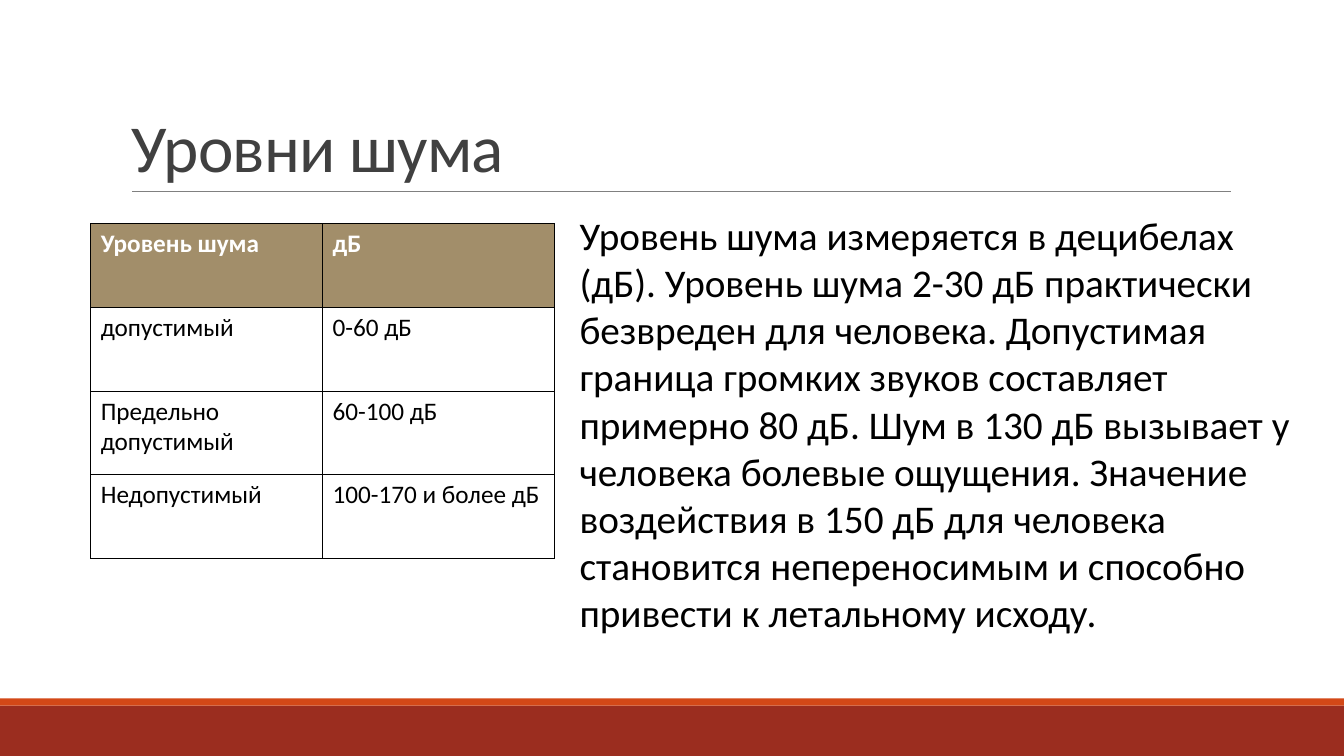
from lxml import etree
from pptx import Presentation
from pptx.dml.color import RGBColor
from pptx.enum.shapes import MSO_CONNECTOR, MSO_SHAPE
from pptx.enum.text import MSO_ANCHOR, MSO_AUTO_SIZE, PP_ALIGN
from pptx.oxml.ns import qn
from pptx.util import Inches, Pt

RECTANGLE = MSO_SHAPE.RECTANGLE
STRAIGHT = MSO_CONNECTOR.STRAIGHT
BOTTOM = MSO_ANCHOR.BOTTOM
LEFT = PP_ALIGN.LEFT
FIT_SHAPE = MSO_AUTO_SIZE.SHAPE_TO_FIT_TEXT
FIXED_SIZE = MSO_AUTO_SIZE.NONE

BRICK = RGBColor(0x9B, 0x2D, 0x1F)
ORANGE = RGBColor(0xD3, 0x48, 0x17)
GRAY = RGBColor(0x80, 0x80, 0x80)
DARK = RGBColor(0x40, 0x40, 0x40)
TAN = RGBColor(0xA2, 0x8E, 0x6A)
BLACK = RGBColor(0, 0, 0)
WHITE = RGBColor(0xFF, 0xFF, 0xFF)

NOISE_LEVELS = [
    ("Уровень шума", "дБ"),
    ("допустимый", "0-60 дБ"),
    ("Предельно допустимый", "60-100 дБ"),
    ("Недопустимый", "100-170 и более дБ"),
]
EXPLANATION = (
    "Уровень шума измеряется в децибелах (дБ). "
    "Уровень шума 2-30 дБ практически безвреден для человека. "
    "Допустимая граница громких звуков составляет примерно 80 дБ. "
    "Шум в 130 дБ вызывает у человека болевые ощущения. "
    "Значение воздействия в 150 дБ для человека становится непереносимым "
    "и способно привести к летальному исходу."
)


class NoiseSlide:
    font = "Calibri"

    def __init__(self, deck):
        self.slide = deck.slides.add_slide(deck.slide_layouts[5])
        self.shapes = self.slide.shapes

    def add_styled_run(self, paragraph, text, size, color, bold=False):
        paragraph.alignment = LEFT
        run = paragraph.add_run()
        run.text = text
        run.font.name = self.font
        run.font.size = Pt(size)
        run.font.bold = bold
        run.font.color.rgb = color
        return run

    def band(self, top, height, color):
        """Draw a full-width coloured strip."""
        strip = self.shapes.add_shape(
            RECTANGLE, 0, Inches(top), Inches(13.33), Inches(height))
        strip.shadow.inherit = False
        strip.fill.solid()
        strip.fill.fore_color.rgb = color
        strip.line.fill.background()

    def rule(self, left, right, y):
        """Draw a thin horizontal line."""
        divider = self.shapes.add_connector(
            STRAIGHT, Inches(left), Inches(y), Inches(right), Inches(y))
        divider.line.color.rgb = GRAY
        divider.line.width = Pt(0.5)
        etree.SubElement(divider._element.spPr, qn("a:effectLst"))

    def title(self, text, left, top, width, height):
        heading = self.shapes.title
        heading.left, heading.top = Inches(left), Inches(top)
        heading.width, heading.height = Inches(width), Inches(height)
        frame = heading.text_frame
        frame.auto_size = FIXED_SIZE
        frame.vertical_anchor = BOTTOM
        frame.paragraphs[0].line_spacing = 0.85
        run = self.add_styled_run(frame.paragraphs[0], text, 48, DARK)
        run._r.get_or_add_rPr().set("spc", "-50")

    def text(self, text, left, top, width, height):
        box = self.shapes.add_textbox(
            Inches(left), Inches(top), Inches(width), Inches(height))
        frame = box.text_frame
        frame.word_wrap = True
        frame.auto_size = FIT_SHAPE
        self.add_styled_run(frame.paragraphs[0], text, 28, BLACK)

    def border(self, cell):
        """Give all four sides of a cell a black 1 pt line."""
        properties = cell._tc.get_or_add_tcPr()
        for position, side in enumerate(("lnL", "lnR", "lnT", "lnB")):
            edge = etree.Element(qn(f"a:{side}"), w=str(Pt(1)))
            fill = etree.SubElement(edge, qn("a:solidFill"))
            etree.SubElement(fill, qn("a:srgbClr"), val=str(BLACK))
            properties.insert(position, edge)

    def table(self, rows, left, top, column_width, row_height):
        columns = len(rows[0])
        table = self.shapes.add_table(
            len(rows), columns, Inches(left), Inches(top),
            Inches(column_width * columns), Inches(row_height * len(rows))).table
        table.horz_banding = False
        for r, row in enumerate(rows):
            header = r == 0
            for c, text in enumerate(row):
                cell = table.cell(r, c)
                cell.fill.solid()
                cell.fill.fore_color.rgb = TAN if header else WHITE
                self.border(cell)
                self.add_styled_run(cell.text_frame.paragraphs[0], text, 18,
                                    WHITE if header else BLACK, header)


def main():
    deck = Presentation()
    deck.slide_width, deck.slide_height = Inches(13.33), Inches(7.5)
    page = NoiseSlide(deck)
    page.band(7, 0.5, BRICK)
    page.band(6.93, 0.07, ORANGE)
    page.rule(1.31, 12.21, 1.9)
    page.title("Уровни шума", 1.2, 0.31, 11, 1.59)
    page.table(NOISE_LEVELS, 0.9, 2.22, 2.3, 0.83)
    page.text(EXPLANATION, 5.65, 2.05, 7.53, 4.34)
    deck.save("out.pptx")


if __name__ == "__main__":
    main()
